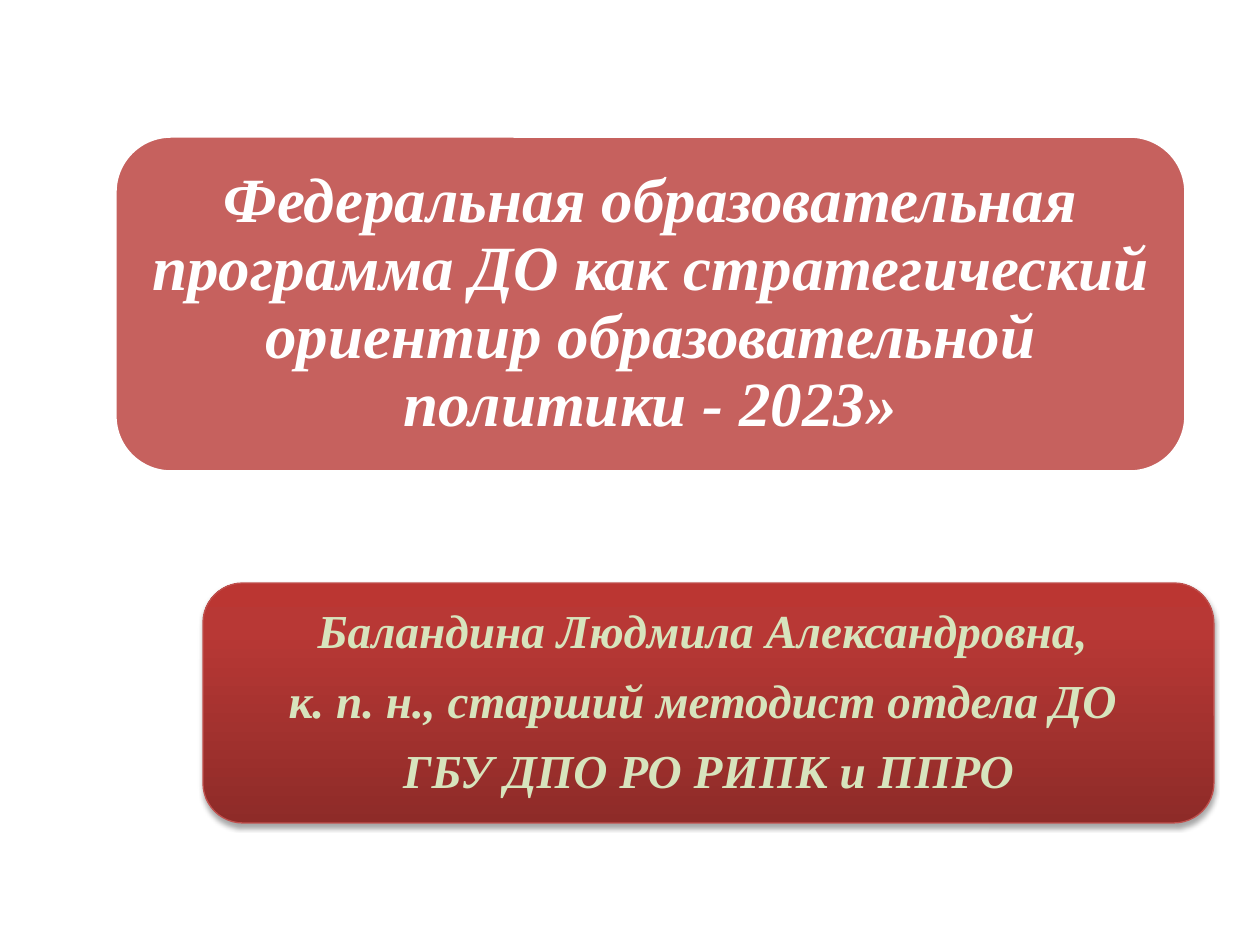
from pptx import Presentation
from pptx.dml.color import RGBColor
from pptx.enum.shapes import MSO_SHAPE as Kind
from pptx.enum.text import MSO_ANCHOR as Anchor, PP_ALIGN as Align
from pptx.oxml import parse_xml
from pptx.oxml.ns import nsdecls
from pptx.util import Pt

SCALE = 914400 / 126
NS = nsdecls("a")


def px(n):
    return round(n * SCALE)


def hue(code):
    return RGBColor.from_string(code)


deck = Presentation()
deck.slide_width, deck.slide_height = px(1260), px(945)
slide = deck.slides.add_slide(deck.slide_layouts[6])

title = ["Федеральная образовательная программа ДО как стратегический "
         "ориентир образовательной политики - 2023»"]
author = ["Баландина Людмила Александровна, ",
          "к. п. н., старший методист отдела ДО ",
          "ГБУ ДПО РО РИПК и ППРО"]
cards = [
    ((115, 136, 1071, 336), 19, title, 36, "FFFFFF", 14.5, "FFFFFF", 2),
    ((203, 583, 1011, 240), 14, author, 27, "D7E4BD", 10.8, "C0504D", 0.75),
]
shapes = []
for box, pad, lines, size, ink, gap, edge, width in cards:
    card = slide.shapes.add_shape(Kind.ROUNDED_RECTANGLE, *map(px, box))
    card.shadow.inherit = False
    card.fill.solid()
    card.fill.fore_color.rgb = hue("C0504D")
    card.line.color.rgb = hue(edge)
    card.line.width = Pt(width)
    frame = card.text_frame
    frame.word_wrap = True
    frame.vertical_anchor = Anchor.MIDDLE
    frame.margin_left = frame.margin_right = px(pad)
    frame.margin_top = frame.margin_bottom = px(pad)
    frame.text = "\n".join(lines)
    for para in frame.paragraphs:
        para.alignment = Align.CENTER
        para.line_spacing = 0.9
        para.space_after = Pt(gap)
        font = para.font
        font.name = "Times New Roman"
        font.size = Pt(size)
        font.bold = font.italic = True
        font.color.rgb = hue(ink)
    shapes.append(card)

head, foot = [card.element.spPr for card in shapes]
tint = head.find(".//{*}solidFill/{*}srgbClr")
tint.append(parse_xml(f'<a:alpha {NS} val="90000"/>'))

stops = "".join(
    f'<a:gs pos="{pos * 1000}"><a:srgbClr val="{code}"/></a:gs>'
    for pos, code in [(0, "8E2B28"), (80, "B83835"), (100, "BB3632")])
blend = parse_xml(f'<a:gradFill {NS} rotWithShape="1"><a:gsLst>{stops}</a:gsLst>'
                  '<a:lin ang="16200000" scaled="0"/></a:gradFill>')
foot.replace(foot.find("{*}solidFill"), blend)
foot.find("{*}effectLst").append(parse_xml(
    f'<a:outerShdw {NS} blurRad="{Pt(3.1)}" dist="{Pt(1.8)}" dir="5400000" '
    'rotWithShape="0"><a:srgbClr val="000000"><a:alpha val="35000"/>'
    '</a:srgbClr></a:outerShdw>'))

deck.save("out.pptx")
